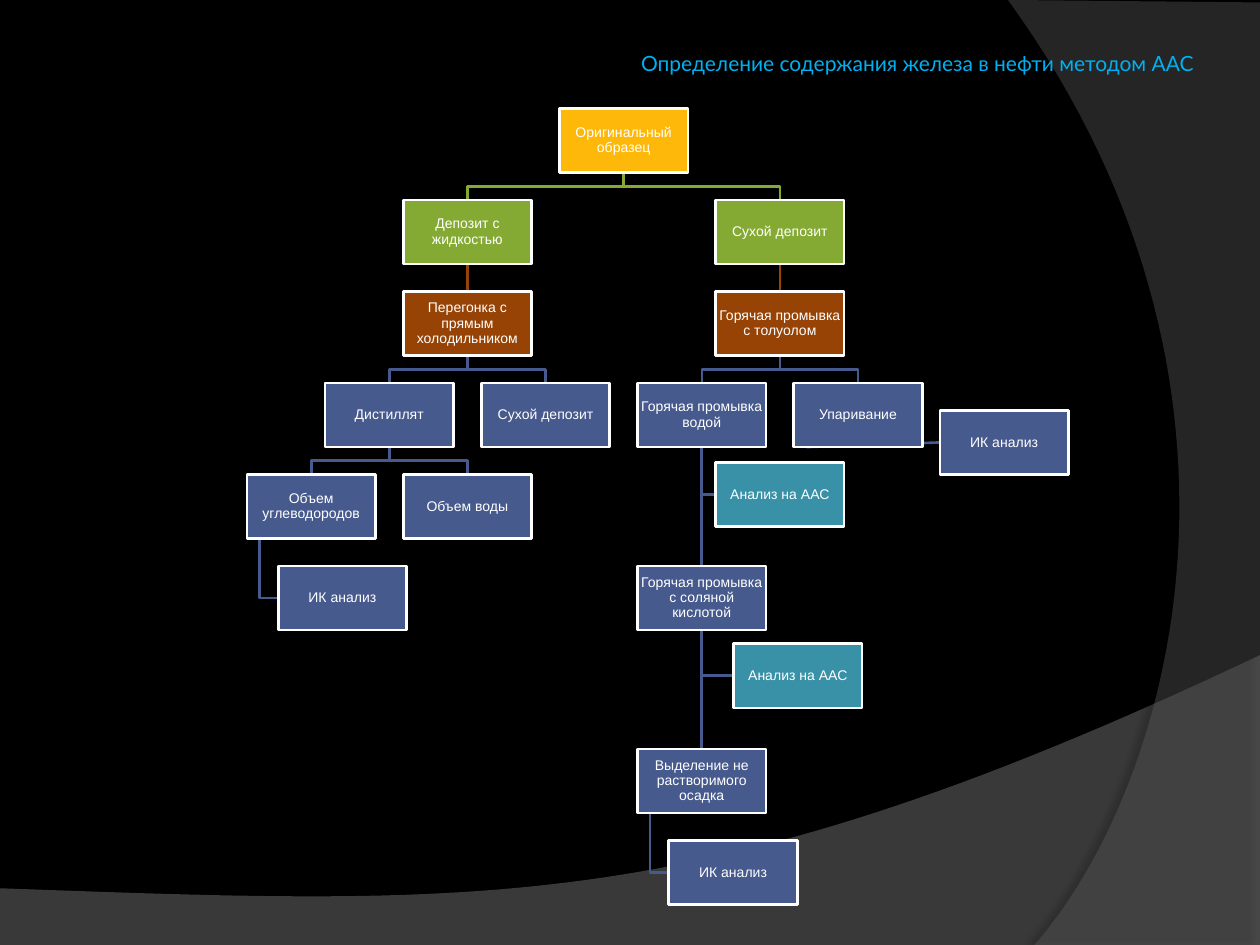
"""Build the slide with the scheme for finding iron in oil by AAS."""
from lxml import etree
from pptx import Presentation
from pptx import util as u
from pptx.dml.color import RGBColor
from pptx.enum import shapes, text
from pptx.oxml import parse_xml
from pptx.oxml.ns import qn

HUES = {"back": "000000", "wave": "7F7F7F", "arc": "5E5E5E", "title": "00B0F0",
        "edge": "FFFFFF", "gold": "FEB80A", "green": "84AA33", "rust": "964305",
        "blue": "475A8D", "teal": "3891A7"}
NS = "http://schemas.openxmlformats.org/drawingml/2006/main"


def hue(name):
    return RGBColor.from_string(HUES[name])


def trace(spots, close=False):
    pts = [(u.Inches(x), u.Inches(y)) for x, y in spots]
    pen = deck.build_freeform(*pts[0], scale=1.0)
    pen.add_line_segments(pts[1:], close=close)
    form = pen.convert_to_shape()
    form.shadow.inherit = False
    return form


prs = Presentation()
prs.slide_width, prs.slide_height = u.Inches(10), u.Inches(7.5)
slide = prs.slides.add_slide(prs.slide_layouts[6])
slide.background.fill.solid()
slide.background.fill.fore_color.rgb = hue("back")
deck = slide.shapes

# name, straight corners, curve points, opacity, shadow opacity, distance, angle
waves = [
    ("wave", [(0, 7.5), (10, 7.5)],
     [(10, 5.2), (5.59, 7.29), (3.91, 7.19), (0, 7.05)], 45, 35, 3.5, 270),
    ("arc", [(8, 0), (10, 0.02), (10, 7.5)],
     [(8.21, 7.5), (9.35, 6.19), (10.18, 3), (8, 0)], 40, 45, 4, 180),
]
for name, ends, bend, fade, dark, dist, turn in waves:
    curve = []
    for i in range(61):
        t = i / 60
        part = [(1 - t) ** 3, 3 * t * (1 - t) ** 2, 3 * t * t * (1 - t), t ** 3]
        curve.append([sum(w * p[k] for w, p in zip(part, bend)) for k in (0, 1)])
    form = trace(ends + curve, True)
    form.fill.solid()
    form.fill.fore_color.rgb = hue(name)
    form.line.fill.background()
    tone = form.element.spPr.find(qn("a:solidFill"))[0]
    etree.SubElement(tone, qn("a:alpha"), val=str(fade * 1000))
    form.element.spPr.find(qn("a:effectLst")).append(parse_xml(
        f'<a:outerShdw xmlns:a="{NS}" blurRad="{u.Pt(4)}" dist="{u.Pt(dist)}" '
        f'dir="{turn * 60000}" algn="ctr" rotWithShape="0">'
        f'<a:srgbClr val="{HUES["back"]}"><a:alpha val="{dark * 1000}"/></a:srgbClr>'
        '</a:outerShdw>'))

title = deck.add_textbox(u.Inches(0.5), u.Inches(0.3), u.Inches(9.03), u.Inches(0.4))
frame = title.text_frame
frame.word_wrap = True
frame.vertical_anchor = text.MSO_ANCHOR.MIDDLE
frame.margin_left = frame.margin_right = u.Inches(0.05)
para = frame.paragraphs[0]
para.text = "Определение содержания железа в нефти методом ААС"
para.alignment = text.PP_ALIGN.RIGHT
para.font.name, para.font.size = "Lato", u.Pt(12)
para.font.color.rgb = hue("title")

WIDE, HIGH = 1.02, 0.51
LEFT, TOP = 4.44, 0.86
STEP, DROP = 0.62, 5.81 / 8

# key: column, row, colour, wording
cells = {
    "start": (0, 0, "gold", "Оригинальный образец"),
    "wet": (-2, 1, "green", "Депозит с жидкостью"),
    "still": (-2, 2, "rust", "Перегонка с прямым холодильником"),
    "dist": (-3, 3, "blue", "Дистиллят"),
    "oil": (-4, 4, "blue", "Объем углеводородов"),
    "oil ir": (-3.6, 5, "blue", "ИК анализ"),
    "water": (-2, 4, "blue", "Объем воды"),
    "rest": (-1, 3, "blue", "Сухой депозит"),
    "dry": (2, 1, "green", "Сухой депозит"),
    "wash": (2, 2, "rust", "Горячая промывка с толуолом"),
    "rinse": (1, 3, "blue", "Горячая промывка водой"),
    "acid": (1, 5, "blue", "Горячая промывка с соляной кислотой"),
    "solid": (1, 7, "blue", "Выделение не растворимого осадка"),
    "solid ir": (1.4, 8, "blue", "ИК анализ"),
    "acid aas": (2.23, 5.85, "teal", "Анализ на ААС"),
    "rinse aas": (2, 3.87, "teal", "Анализ на ААС"),
    "steam": (3, 3, "blue", "Упаривание"),
    "steam ir": (4.87, 3.3, "blue", "ИК анализ"),
}
boxes, spots = {}, {}
for key, (col, row, tint, words) in cells.items():
    x, y = LEFT + col * STEP, TOP + row * DROP
    spots[key] = x, y
    box = boxes[key] = deck.add_shape(
        shapes.MSO_SHAPE.RECTANGLE, u.Inches(x), u.Inches(y),
        u.Inches(WIDE), u.Inches(HIGH))
    box.shadow.inherit = False
    box.fill.solid()
    box.fill.fore_color.rgb = hue(tint)
    box.line.color.rgb = hue("edge")
    box.line.width = u.Pt(1.5)
    frame = box.text_frame
    frame.word_wrap = True
    frame.vertical_anchor = text.MSO_ANCHOR.MIDDLE
    frame.margin_left = frame.margin_right = u.Inches(0.01)
    frame.margin_top = frame.margin_bottom = u.Inches(0.01)
    para = frame.paragraphs[0]
    para.text = words
    para.alignment = text.PP_ALIGN.CENTER
    para.line_spacing = 0.9
    para.font.name, para.font.size = "Arial", u.Pt(8)
    para.font.color.rgb = hue("edge")

lines = []
forks = [("start", "wet", "green"), ("start", "dry", "green"),
         ("still", "dist", "blue"), ("still", "rest", "blue"),
         ("dist", "oil", "blue"), ("dist", "water", "blue"),
         ("wash", "rinse", "blue"), ("wash", "steam", "blue")]
for top, low, tint in forks:
    (x, y), (tox, toy) = spots[top], spots[low]
    x, y, tox = x + WIDE / 2, y + HIGH, tox + WIDE / 2
    mid = (y + toy) / 2
    lines.append((trace([(x, y), (x, mid), (tox, mid), (tox, toy)]), tint))

sides = [("oil", "oil ir", 0.1), ("solid", "solid ir", 0.1),
         ("rinse", "rinse aas", WIDE / 2), ("acid", "acid aas", WIDE / 2)]
for top, low, inset in sides:
    (x, y), (tox, toy) = spots[top], spots[low]
    x, mid = x + inset, toy + HIGH / 2
    lines.append((trace([(x, y + HIGH), (x, mid), (tox, mid)]), "blue"))

links = [("wet", "still", "rust", 0), ("dry", "wash", "rust", 0),
         ("rinse", "acid", "blue", 0), ("acid", "solid", "blue", 0),
         ("steam", "steam ir", "blue", 1)]
for top, low, tint, side in links:
    x, y = spots[top]
    link = deck.add_connector(shapes.MSO_CONNECTOR.STRAIGHT, u.Inches(x + 0.1),
                              u.Inches(y + HIGH), 0, 0)
    if side == 0:
        link.begin_connect(boxes[top], 2)
    link.end_connect(boxes[low], side)
    etree.SubElement(link.element.spPr, qn("a:effectLst"))
    lines.append((link, tint))

for line, tint in lines:
    if line.shape_type == shapes.MSO_SHAPE_TYPE.FREEFORM:
        line.fill.background()
    line.line.color.rgb = hue(tint)
    line.line.width = u.Pt(1.5)

tree = title.element.getparent()
for box in boxes.values():
    tree.append(box.element)

prs.save("out.pptx")
